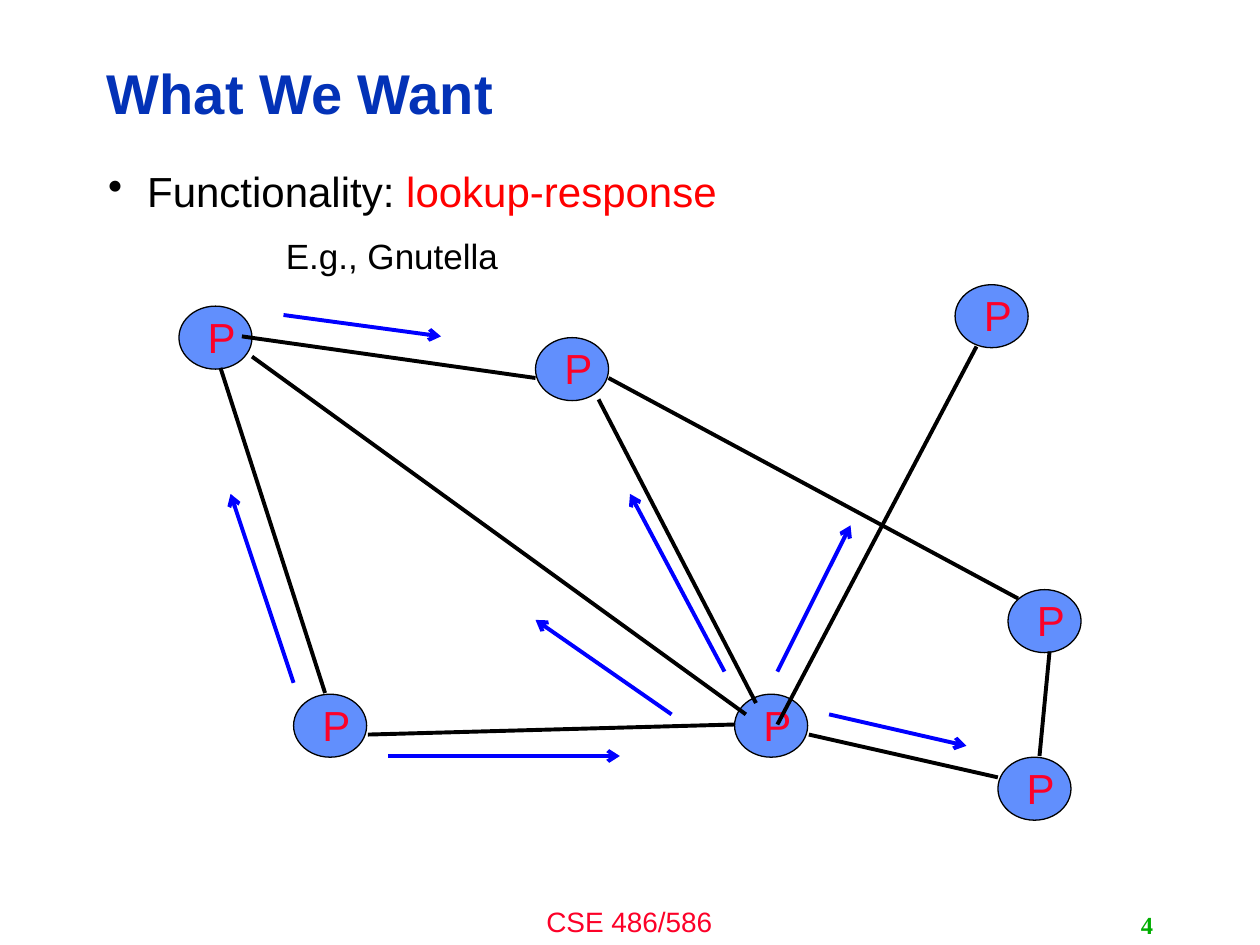
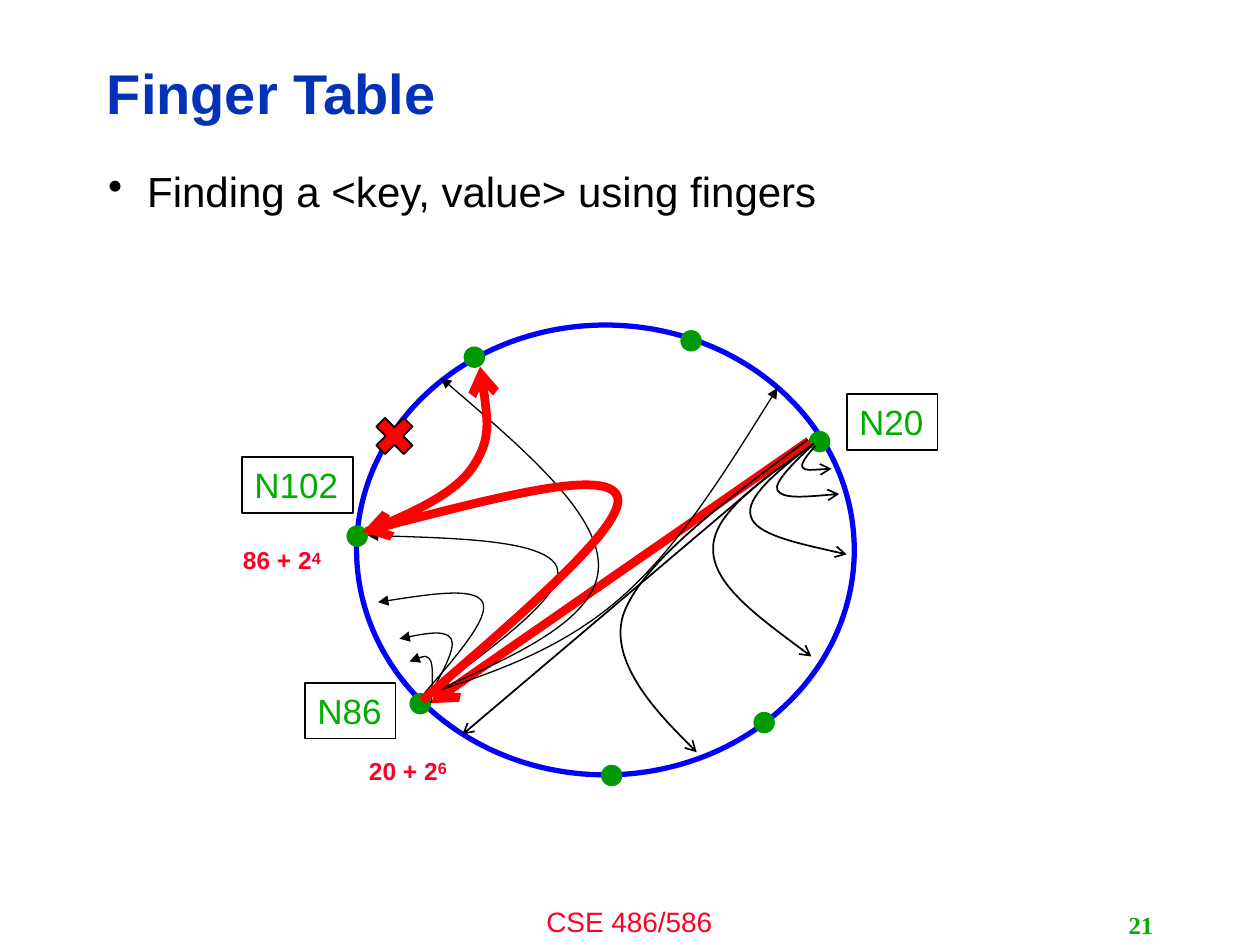
from pptx import Presentation
from pptx.dml.color import RGBColor
from pptx.enum.shapes import MSO_CONNECTOR, MSO_SHAPE
from pptx.enum.text import MSO_ANCHOR, PP_ALIGN
from pptx.oxml import parse_xml
from pptx.oxml.ns import nsdecls, qn
from pptx.oxml.xmlchemy import OxmlElement
from pptx.util import Inches, Pt

BLACK = RGBColor(0x00, 0x00, 0x00)
RED = RGBColor(0xFF, 0x00, 0x00)
CRIMSON = RGBColor(0xFC, 0x01, 0x28)
TITLE_BLUE = RGBColor(0x03, 0x32, 0xB7)
BLUE = RGBColor(0x00, 0x00, 0xFF)
PEER_BLUE = RGBColor(0x61, 0x8F, 0xFD)
LABEL_GREEN = RGBColor(0x00, 0xAE, 0x00)
DOT_GREEN = RGBColor(0x00, 0x99, 0x00)


def write(box, spans, size, bold=False, font="Arial", align=PP_ALIGN.LEFT,
          anchor=MSO_ANCHOR.TOP, wrap=False):
    """Fill a box with one paragraph made of (text, colour) spans."""
    frame = box.text_frame
    frame.word_wrap = wrap
    frame.vertical_anchor = anchor
    para = frame.paragraphs[0]
    para.alignment = align
    for text, color in spans:
        span = para.add_run()
        span.text = text
        span.font.name = font
        span.font.size = Pt(size)
        span.font.bold = bold
        span.font.color.rgb = color
    return para


def outline(shape, color, width, arrowhead=None):
    """Give a shape or connector a plain line without shadow."""
    shape.line.color.rgb = color
    shape.line.width = Pt(width)
    properties = shape._element.spPr
    if arrowhead:
        tail = OxmlElement("a:tailEnd")
        tail.set("type", arrowhead)
        properties.find(qn("a:ln")).append(tail)
    properties.append(OxmlElement("a:effectLst"))


deck = Presentation()
deck.slide_width = Inches(10)
deck.slide_height = Inches(7.5)

# Title, bullet, footer and number on both slides
contents = [
    ("What We Want", [("Functionality: ", BLACK), ("lookup-response", RED)], "4"),
    ("Finger Table", [("Finding a <key, value> using fingers", BLACK)], "21"),
]
pages = []
for title, bullet, number in contents:
    page = deck.slides.add_slide(deck.slide_layouts[6])
    pages.append(page)

    box = page.shapes.add_textbox(Inches(3.33), Inches(7.13), Inches(3.33), Inches(0.37))
    write(box, [("CSE 486/586", CRIMSON)], 16, align=PP_ALIGN.CENTER, wrap=True)

    box = page.shapes.add_textbox(Inches(0.75), Inches(0.36), Inches(7.98), Inches(0.81))
    para = write(box, [(title, TITLE_BLUE)], 32, bold=True,
                 anchor=MSO_ANCHOR.MIDDLE, wrap=True)
    para.line_spacing = 0.9

    box = page.shapes.add_textbox(Inches(0.76), Inches(1.31), Inches(8.4), Inches(5.39))
    para = write(box, bullet, 24, wrap=True)
    para.line_spacing = 0.9
    settings = para._p.get_or_add_pPr()
    settings.set("marL", str(Inches(0.31)))
    settings.set("indent", str(Inches(-0.31)))
    settings.append(parse_xml(f'<a:buChar {nsdecls("a")} char="•"/>'))

    box = page.shapes.add_textbox(Inches(7.17), Inches(7.18), Inches(2.08), Inches(0.32))
    write(box, [(number, LABEL_GREEN)], 14, bold=True, font="Times New Roman",
          align=PP_ALIGN.RIGHT, anchor=MSO_ANCHOR.MIDDLE, wrap=True)

peer_page, ring_page = pages

# Peers: an ellipse and its letter, grouped
peers = [(5.83, 5.51), (1.42, 2.43), (8, 4.68), (2.33, 5.51),
         (4.25, 2.68), (7.58, 2.26), (7.92, 6.01)]
for left, top in peers:
    group = peer_page.shapes.add_group_shape()
    peer = group.shapes.add_shape(MSO_SHAPE.OVAL, Inches(left), Inches(top),
                                  Inches(0.58), Inches(0.5))
    peer.fill.solid()
    peer.fill.fore_color.rgb = PEER_BLUE
    outline(peer, BLACK, 0.75)
    box = group.shapes.add_textbox(Inches(left + 0.13), Inches(top - 0.01),
                                   Inches(0.39), Inches(0.5))
    write(box, [("P", CRIMSON)], 24)

box = peer_page.shapes.add_textbox(Inches(2.17), Inches(1.81), Inches(1.9), Inches(0.44))
write(box, [("E.g., Gnutella", BLACK)], 20)

# Links between peers, and the messages sent along them
links = [
    (4.25, 3, 1.92, 2.67), (1.75, 2.92, 2.58, 5.5), (4.83, 3, 8.08, 4.75),
    (2, 2.83, 5.92, 5.67), (4.75, 3.17, 6, 5.58), (2.92, 5.83, 5.83, 5.75),
    (7.75, 2.75, 6.17, 5.75), (7.92, 6.17, 6.42, 5.83), (8.25, 6, 8.33, 5.17),
]
messages = [
    (3.08, 6, 4.92, 6), (5.33, 5.67, 4.25, 4.92), (5.75, 5.33, 5, 3.92),
    (6.17, 5.33, 6.75, 4.17), (2.33, 5.42, 1.83, 3.92), (2.25, 2.5, 3.5, 2.67),
    (6.58, 5.67, 7.67, 5.92),
]
for lines, color, arrowhead in [(links, BLACK, None), (messages, BLUE, "arrow")]:
    for ends in lines:
        line = peer_page.shapes.add_connector(MSO_CONNECTOR.STRAIGHT,
                                              *[Inches(value) for value in ends])
        outline(line, color, 2.25, arrowhead)

# Ring and its nodes
ring = ring_page.shapes.add_shape(MSO_SHAPE.OVAL, Inches(2.83), Inches(2.58),
                                  Inches(3.95), Inches(3.57))
ring.fill.background()
outline(ring, BLUE, 3)

nodes = [(6.42, 3.42), (2.75, 4.17), (5.98, 5.65), (3.68, 2.75),
         (3.25, 5.5), (4.77, 6.07), (5.4, 2.62)]
for left, top in nodes:
    node = ring_page.shapes.add_shape(MSO_SHAPE.OVAL, Inches(left), Inches(top),
                                      Inches(0.17), Inches(0.17))
    node.fill.solid()
    node.fill.fore_color.rgb = DOT_GREEN
    node.line.fill.background()
    node.shadow.inherit = False

# Node labels
labels = [("N86", 2.42, 5.42, 0.72, 0.75), ("N102", 1.92, 3.63, 0.88, 1),
          ("N20", 6.72, 3.13, 0.72, 1)]
for name, left, top, width, weight in labels:
    label = ring_page.shapes.add_shape(MSO_SHAPE.RECTANGLE, Inches(left), Inches(top),
                                       Inches(width), Inches(0.44))
    label.fill.background()
    outline(label, BLACK, weight)
    write(label, [(name, LABEL_GREEN)], 20)

# Key offsets with a raised exponent
for base, exponent, left, top in [("86 + 2", "4", 1.83, 4.25), ("20 + 2", "6", 2.83, 5.92)]:
    box = ring_page.shapes.add_textbox(Inches(left), Inches(top), Inches(0.84), Inches(0.34))
    para = write(box, [(base, CRIMSON), (exponent, CRIMSON)], 14, bold=True)
    raised = para.runs[1].font
    raised.size = Pt(16)
    raised._element.set("baseline", "20000")

# Failed node
cross = ring_page.shapes.add_shape(MSO_SHAPE.MATH_MULTIPLY, Inches(2.92), Inches(3.25),
                                   Inches(0.42), Inches(0.42))
cross.fill.solid()
cross.fill.fore_color.rgb = RED
outline(cross, BLACK, 1)

# Straight fingers
for end, color, weight in [((3.67, 5.83), BLACK, 1), ((3.42, 5.58), RED, 5)]:
    finger = ring_page.shapes.add_connector(MSO_CONNECTOR.STRAIGHT, Inches(6.42), Inches(3.5),
                                            Inches(end[0]), Inches(end[1]))
    outline(finger, color, weight, "arrow")

# Curved fingers: a start, then two Bezier segments of three points each
n86_fingers = [
    [(3.42, 5.58), (3.43, 5.44), (3.44, 5.31), (3.42, 5.25),
     (3.39, 5.19), (3.32, 5.22), (3.25, 5.25)],
    [(3.42, 5.5), (3.52, 5.32), (3.62, 5.14), (3.58, 5.07),
     (3.54, 5), (3.35, 5.03), (3.17, 5.07)],
    [(3.37, 5.5), (3.63, 5.2), (3.89, 4.9), (3.83, 4.78),
     (3.77, 4.66), (3.38, 4.72), (3, 4.78)],
    [(3.42, 5.5), (3.96, 5.1), (4.5, 4.71), (4.42, 4.5),
     (4.33, 4.29), (3.62, 4.27), (2.92, 4.25)],
    [(3.42, 5.5), (4.08, 5.21), (4.74, 4.92), (4.75, 4.5),
     (4.76, 4.08), (4.13, 3.54), (3.5, 3)],
    [(3.42, 5.5), (3.94, 5.33), (4.46, 5.15), (4.92, 4.75),
     (5.38, 4.35), (5.77, 3.72), (6.17, 3.08)],
]
n20_fingers = [
    [(6.47, 3.54), (6.41, 3.61), (6.35, 3.68), (6.37, 3.71),
     (6.39, 3.74), (6.6, 3.72), (6.6, 3.72)],
    [(6.44, 3.54), (6.29, 3.68), (6.14, 3.83), (6.17, 3.89),
     (6.21, 3.96), (6.43, 3.94), (6.66, 3.92)],
    [(6.43, 3.54), (6.17, 3.74), (5.91, 3.95), (5.96, 4.1),
     (6, 4.24), (6.36, 4.32), (6.72, 4.4)],
    [(6.46, 3.52), (6.06, 3.8), (5.66, 4.07), (5.66, 4.35),
     (5.65, 4.63), (6.05, 4.92), (6.44, 5.21)],
    [(6.41, 3.49), (5.76, 3.97), (5.1, 4.46), (4.95, 4.87),
     (4.81, 5.28), (5.53, 5.97), (5.53, 5.97)],
]
lookup_route = [
    [(3.35, 5.56), (4.16, 4.86), (4.98, 4.16), (4.9, 3.94),
     (4.82, 3.72), (3.85, 3.97), (2.88, 4.22)],
    [(2.91, 4.22), (3.25, 4.08), (3.6, 3.93), (3.75, 3.71),
     (3.9, 3.49), (3.86, 3.2), (3.81, 2.91)],
]
for curves, color, weight, arrowhead in [(n86_fingers, BLACK, 0.75, "triangle"),
                                         (n20_fingers, BLACK, 1, "arrow"),
                                         (lookup_route, RED, 5, "arrow")]:
    for points in curves:
        start, *rest = [(Inches(x), Inches(y)) for x, y in points]
        builder = ring_page.shapes.build_freeform(*start)
        builder.add_line_segments(rest, close=False)
        curve = builder.convert_to_shape()
        # Join each three line points into one cubic segment
        outline_path = curve._element.spPr.find(".//" + qn("a:path"))
        steps = outline_path.findall(qn("a:lnTo"))
        for first in range(0, len(steps), 3):
            cubic = OxmlElement("a:cubicBezTo")
            for step in steps[first:first + 3]:
                cubic.append(step[0])
                outline_path.remove(step)
            outline_path.append(cubic)
        curve.fill.background()
        outline(curve, color, weight, arrowhead)

deck.save("out.pptx")
